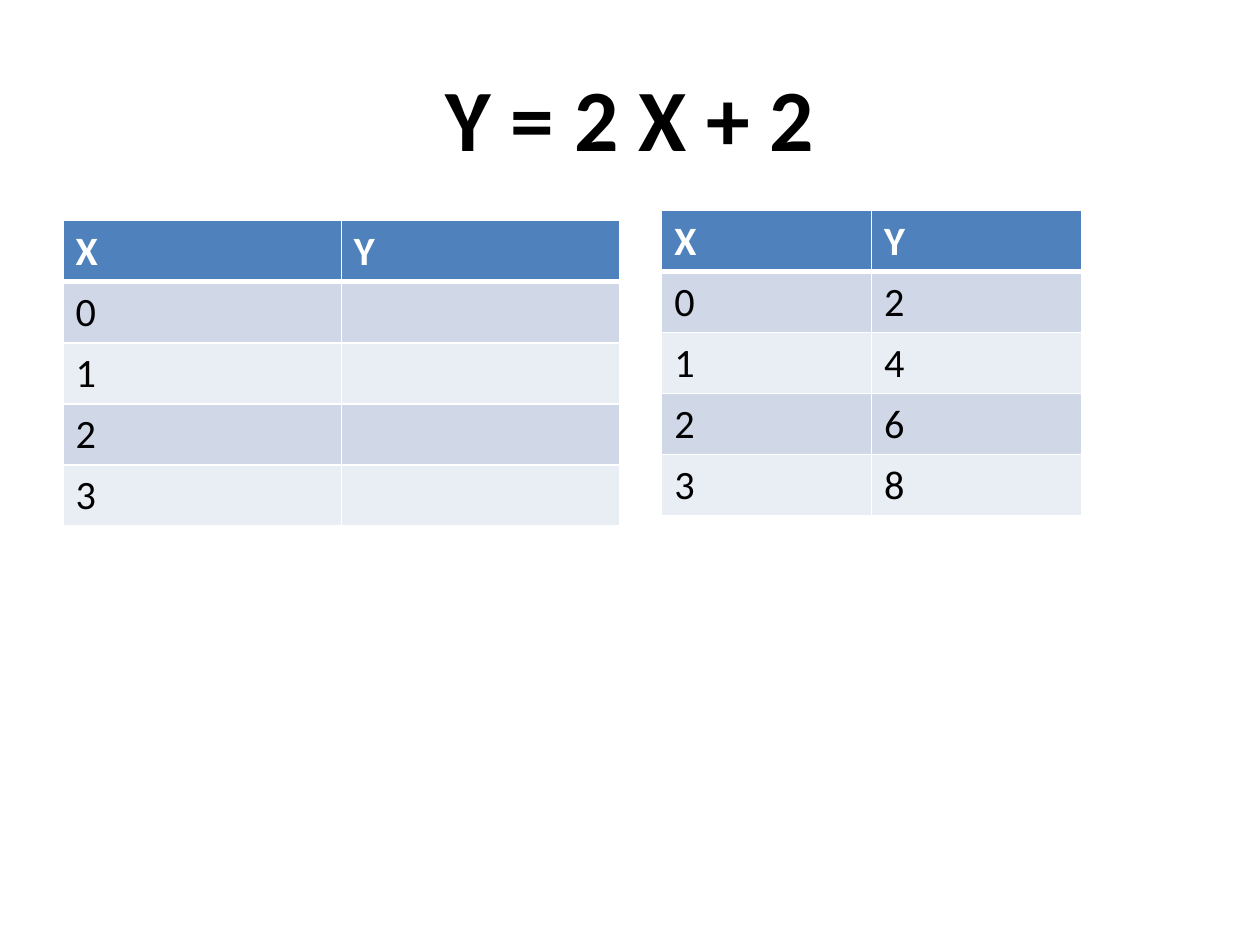
from dataclasses import dataclass

from lxml.etree import SubElement
from pptx import Presentation
from pptx.dml.color import RGBColor as Rgb
from pptx.enum.text import MSO_ANCHOR as Anchor, PP_ALIGN as Align
from pptx.oxml.ns import qn
from pptx.util import Cm, Pt

COLORS = {
    "title": "000000",
    "header": "4F81BD",
    "header_text": "FFFFFF",
    "odd_row": "D0D8E8",
    "even_row": "E9EDF4",
    "body_text": "000000",
    "grid": "FFFFFF",
}
TITLE_FONT = {"name": "Calibri", "size": Pt(50), "bold": True}
HEADER_FONT = {"name": "Calibri", "size": Pt(23), "bold": True}
BODY_FONT = {**HEADER_FONT, "bold": False}
ROW_HEIGHT = 1.23
THIN, THICK = 1, 3


@dataclass
class ValueTable:
    left: float
    top: float
    column_width: float
    y_values: tuple[str, ...]


VALUE_TABLES = (
    ValueTable(1.27, 4.45, 5.61, ("", "", "", "")),
    ValueTable(13.34, 4.24, 4.23, ("2", "4", "6", "8")),
)


def write(paragraph, text: str, font_format: dict, color: str) -> None:
    """Give the paragraph one formatted run."""
    run = paragraph.add_run()
    run.text = text
    for attribute, value in font_format.items():
        setattr(run.font, attribute, value)
    run.font.color.rgb = Rgb.from_string(COLORS[color])


def draw_borders(cell, row: int) -> None:
    """Draw the grid lines, thick between the header and the body."""
    widths = {
        "lnL": THIN,
        "lnR": THIN,
        "lnT": THICK if row == 1 else THIN,
        "lnB": THICK if row == 0 else THIN,
    }
    properties = cell._tc.get_or_add_tcPr()
    for side, width in widths.items():
        line = SubElement(properties, qn(f"a:{side}"), w=str(Pt(width)))
        fill = SubElement(line, qn("a:solidFill"))
        SubElement(fill, qn("a:srgbClr"), val=COLORS["grid"])


def draw_value_table(slide, values: ValueTable) -> None:
    rows = [("X", "Y")]
    rows += [(str(x), y) for x, y in enumerate(values.y_values)]
    table = slide.shapes.add_table(
        len(rows), 2, Cm(values.left), Cm(values.top),
        Cm(2 * values.column_width), Cm(len(rows) * ROW_HEIGHT),
    ).table
    for row, texts in enumerate(rows):
        if row == 0:
            fill, color, font_format = "header", "header_text", HEADER_FONT
        else:
            fill = "odd_row" if row % 2 else "even_row"
            color, font_format = "body_text", BODY_FONT
        for column, text in enumerate(texts):
            cell = table.cell(row, column)
            draw_borders(cell, row)
            cell.fill.solid()
            cell.fill.fore_color.rgb = Rgb.from_string(COLORS[fill])
            if text:
                write(cell.text_frame.paragraphs[0], text, font_format, color)


def draw_title(slide, text: str) -> None:
    frame = slide.shapes.add_textbox(
        Cm(1.27), Cm(0.76), Cm(22.86), Cm(3.18)
    ).text_frame
    frame.word_wrap = True
    frame.vertical_anchor = Anchor.MIDDLE
    frame.paragraphs[0].alignment = Align.CENTER
    write(frame.paragraphs[0], text, TITLE_FONT, "title")


def main() -> None:
    presentation = Presentation()
    presentation.slide_width, presentation.slide_height = Cm(25.4), Cm(19.05)
    slide = presentation.slides.add_slide(presentation.slide_layouts[6])

    # Equation
    draw_title(slide, "Y = 2 X + 2")

    # Table to fill in, and its solution
    for values in VALUE_TABLES:
        draw_value_table(slide, values)

    presentation.save("out.pptx")


if __name__ == "__main__":
    main()
